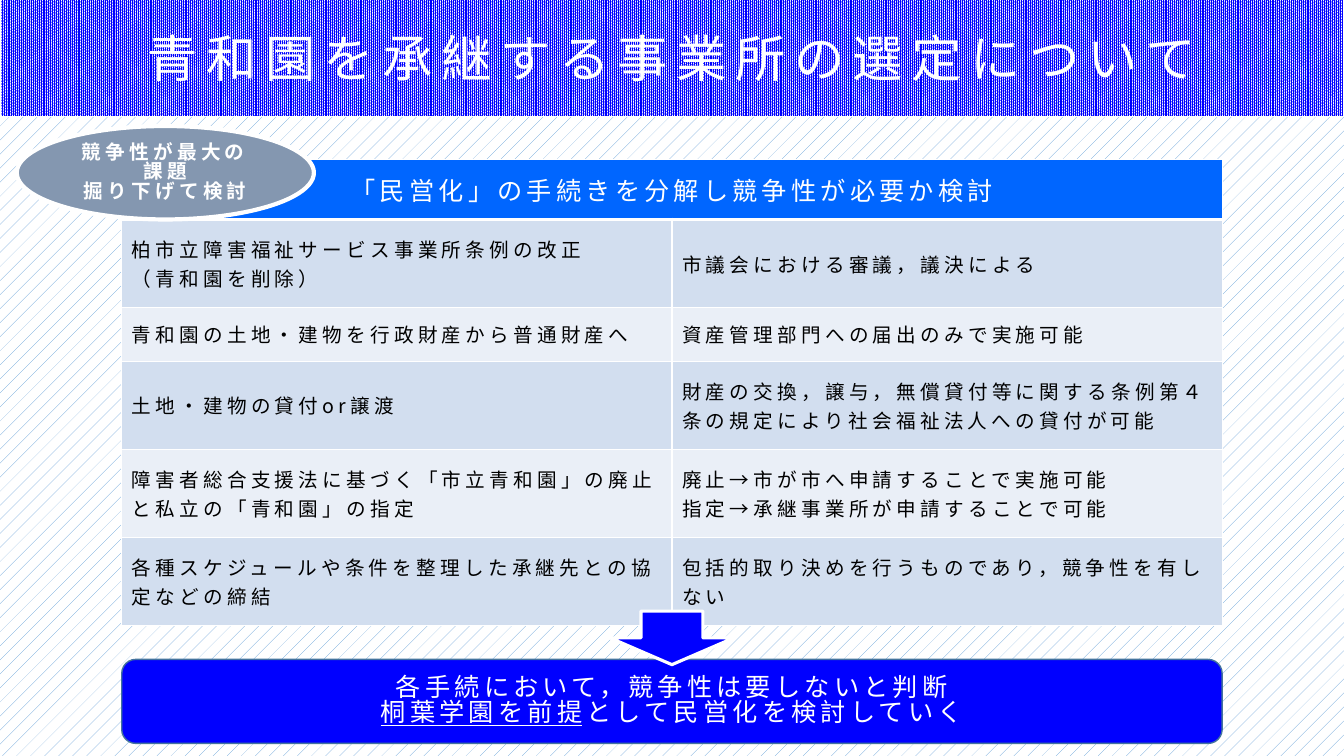
from lxml.etree import SubElement
from pptx import Presentation
from pptx.dml.color import RGBColor
from pptx.enum.dml import MSO_PATTERN as Pattern
from pptx.enum.shapes import MSO_SHAPE as Shape
from pptx.enum.text import MSO_ANCHOR as Anchor, PP_ALIGN as Align
from pptx.oxml.ns import qn
from pptx.util import Pt

EMU_PER_PX = 9525
COLORS = {
    "white": "FFFFFF",
    "black": "000000",
    "blue": "0000FF",
    "header": "0066FF",
    "pattern": "5B9BD5",
    "outline": "43739E",
    "slate": "8497B0",
    "odd_row": "D2DEEF",
    "even_row": "EAEFF7",
}
STEPS = [
    ("柏市立障害福祉サービス事業所条例の改正\n（青和園を削除）",
     "市議会における審議，議決による"),
    ("青和園の土地・建物を行政財産から普通財産へ",
     "資産管理部門への届出のみで実施可能"),
    ("土地・建物の貸付or譲渡",
     "財産の交換，譲与，無償貸付等に関する条例第４条の規定により社会福祉法人への貸付が可能"),
    ("障害者総合支援法に基づく「市立青和園」の廃止と私立の「青和園」の指定",
     "廃止→市が市へ申請することで実施可能\n指定→承継事業所が申請することで可能"),
    ("各種スケジュールや条件を整理した承継先との協定などの締結",
     "包括的取り決めを行うものであり，競争性を有しない"),
]
ROW_HEIGHTS = [57, 84, 51, 84, 84, 84]


def px(length):
    return length * EMU_PER_PX


def color(name):
    return RGBColor.from_string(COLORS[name])


def write(frame, text, size=14, ink="white", bold=False, align=Align.CENTER,
          tracking=3, leading=None, underlined=None):
    frame.word_wrap = True
    for index, line in enumerate(text.split("\n")):
        para = frame.add_paragraph() if index else frame.paragraphs[0]
        para.alignment = align
        if leading:
            para.line_spacing = leading
        pieces = [line]
        if underlined and line.startswith(underlined):
            pieces = [underlined, line.removeprefix(underlined)]
        for piece in pieces:
            span = para.add_run()
            span.text = piece
            font = span.font
            font.name = SlideBuilder.font
            font.size = Pt(size)
            font.bold = bold
            font.underline = piece == underlined
            font.color.rgb = color(ink)
            properties = font._element
            properties.set("spc", str(tracking * 100))
            SubElement(properties, qn("a:ea"), typeface=SlideBuilder.font)


class SlideBuilder:
    font = "Noto Sans CJK JP"

    def __init__(self, deck):
        self.page = deck.slides.add_slide(deck.slide_layouts[6])

    def pattern(self, fill, kind, front):
        fill.patterned()
        fill.pattern = kind
        fill.fore_color.rgb = color(front)
        fill.back_color.rgb = color("white")

    def background(self, kind, front):
        self.pattern(self.page.background.fill, kind, front)

    def shape(self, kind, left, top, width, height, fill, line="white",
              weight=1, pattern=None, text=None, **style):
        box = self.page.shapes.add_shape(kind, *map(px, (left, top, width, height)))
        box.shadow.inherit = False
        if pattern is None:
            box.fill.solid()
            box.fill.fore_color.rgb = color(fill)
        else:
            self.pattern(box.fill, pattern, fill)
        box.line.color.rgb = color(line)
        box.line.width = Pt(weight)
        if text:
            box.text_frame.vertical_anchor = Anchor.MIDDLE
            write(box.text_frame, text, **style)

    def cell(self, cell, fill, bottom=1, top=1):
        cell.vertical_anchor = Anchor.MIDDLE
        properties = cell._tc.get_or_add_tcPr()
        for side, weight in (("L", 1), ("R", 1), ("T", top), ("B", bottom)):
            border = SubElement(properties, qn(f"a:ln{side}"), w=str(Pt(weight)))
            solid = SubElement(border, qn("a:solidFill"))
            SubElement(solid, qn("a:srgbClr"), val=COLORS["white"])
        cell.fill.solid()
        cell.fill.fore_color.rgb = color(fill)

    def table(self, left, top, width, heading, rows, heights):
        table = self.page.shapes.add_table(
            len(heights), 2, *map(px, (left, top, width, sum(heights)))).table
        for row, height in zip(table.rows, heights):
            row.height = px(height)
        for column in range(2):
            self.cell(table.cell(0, column), "header", bottom=3)
        table.cell(0, 0).merge(table.cell(0, 1))
        write(table.cell(0, 0).text_frame, heading, size=18)
        for number, texts in enumerate(rows, 1):
            fill = "odd_row" if number % 2 else "even_row"
            for column, text in enumerate(texts):
                cell = table.cell(number, column)
                self.cell(cell, fill, top=3 if number == 1 else 1)
                write(cell.text_frame, text, ink="black", align=Align.LEFT)


def main():
    deck = Presentation()
    deck.slide_width = px(1280)
    deck.slide_height = px(720)
    slide = SlideBuilder(deck)
    slide.background(Pattern.PERCENT_5, "pattern")
    slide.table(116, 152, 1048, "「民営化」の手続きを分解し競争性が必要か検討",
                STEPS, ROW_HEIGHTS)
    slide.shape(Shape.RECTANGLE, 0, -2, 1280, 113, "blue",
                pattern=Pattern.PERCENT_90,
                text="青和園を承継する事業所の選定について", size=36, tracking=6)
    slide.shape(Shape.OVAL, 16, 120, 283, 89, "slate", weight=3,
                text="競争性が最大の課題\n掘り下げて検討", bold=True, leading=0.83)
    slide.shape(Shape.ROUNDED_RECTANGLE, 116, 628, 1048, 80, "blue", line="outline",
                text="各手続において，競争性は要しないと判断\n"
                     "桐葉学園を前提として民営化を検討していく",
                size=18, leading=0.85, underlined="桐葉学園を前提")
    slide.shape(Shape.DOWN_ARROW, 581, 582, 118, 51, "blue", weight=2.25)
    deck.save("out.pptx")


if __name__ == "__main__":
    main()
